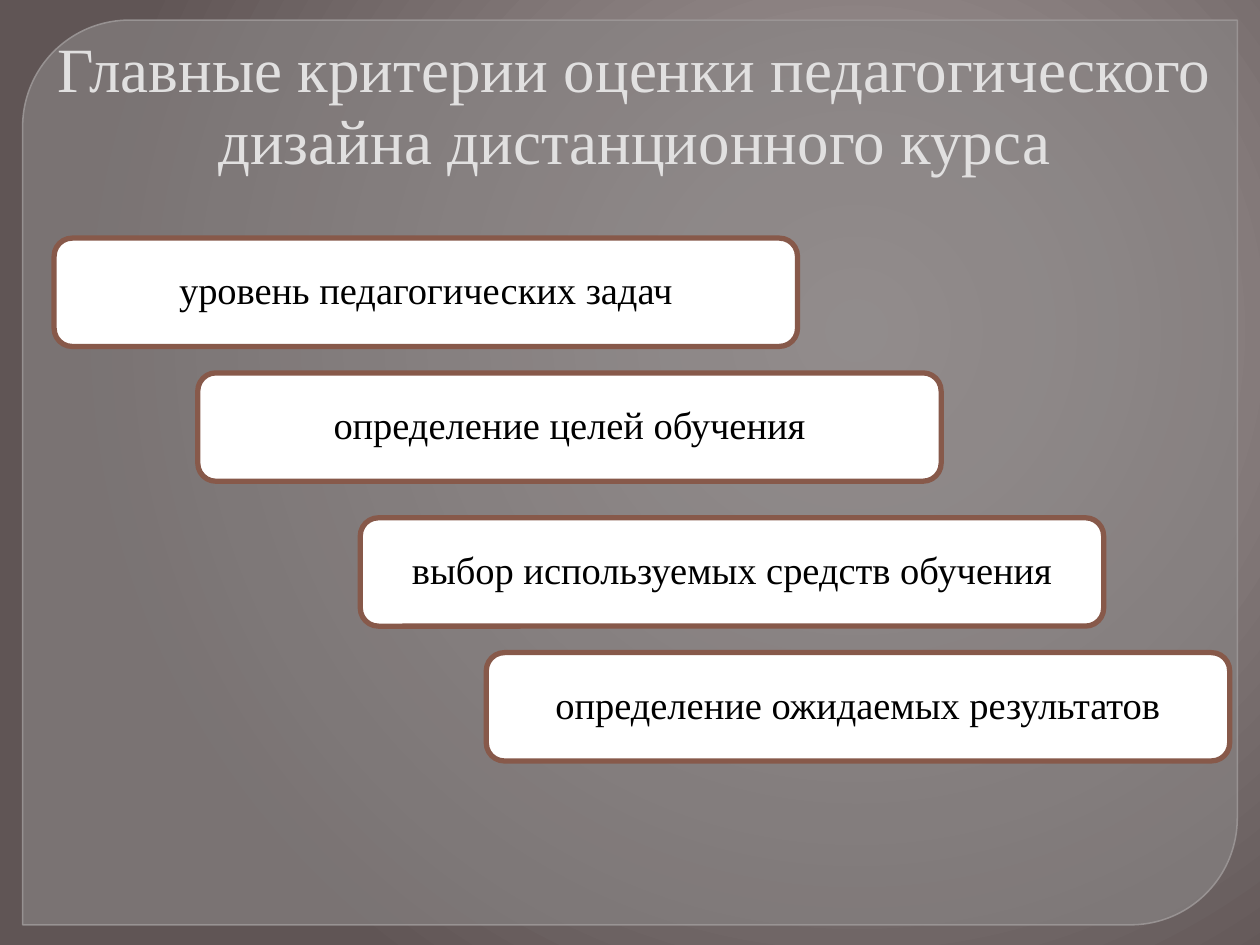
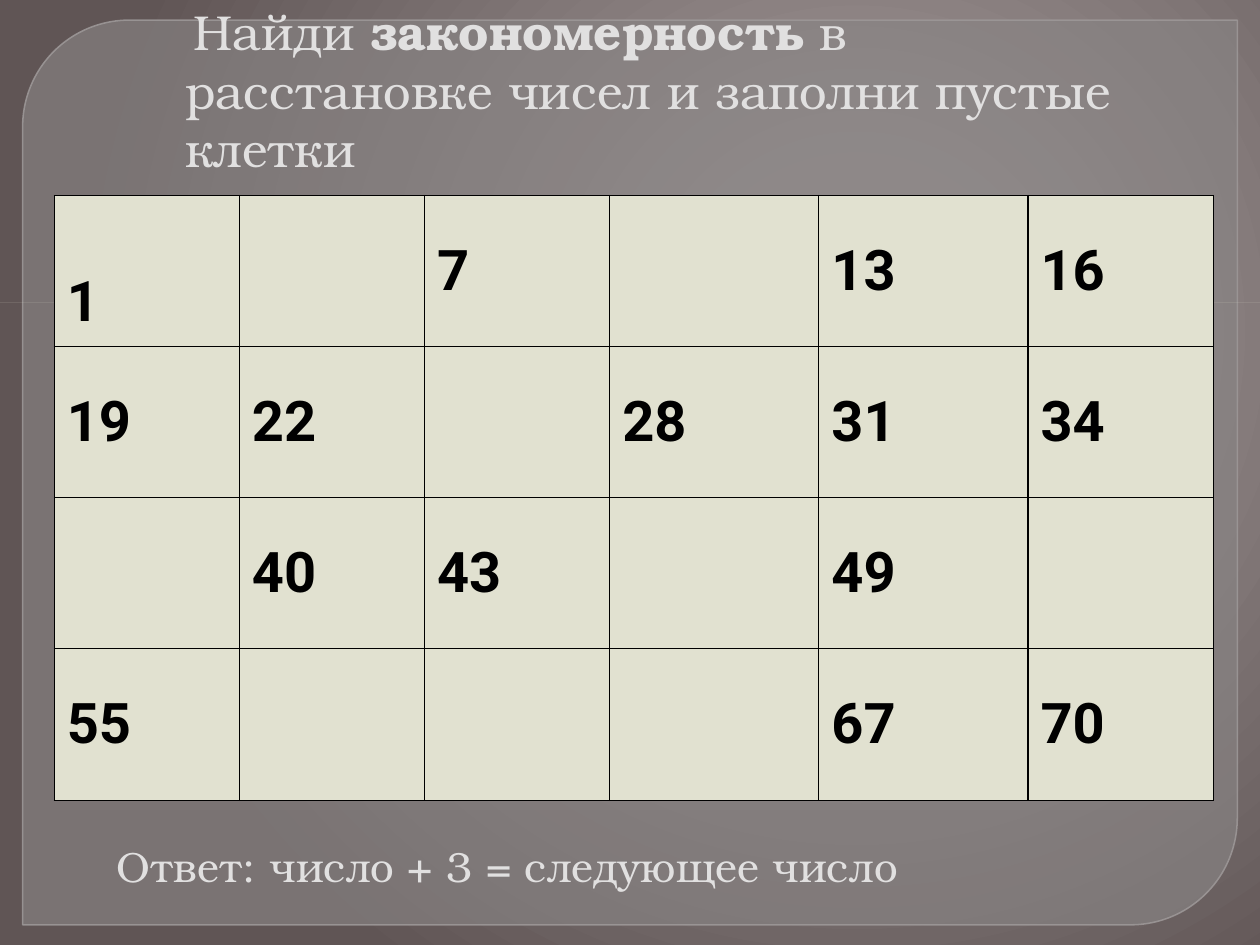
from lxml.etree import SubElement
from pptx import Presentation
from pptx.dml.color import RGBColor
from pptx.enum.shapes import MSO_SHAPE
from pptx.enum.text import MSO_ANCHOR, MSO_AUTO_SIZE, PP_ALIGN
from pptx.oxml import parse_xml
from pptx.oxml.ns import nsdecls, qn
from pptx.util import Inches, Pt

BAND = RGBColor(0x88, 0x84, 0x84)
EDGE = RGBColor(0x9D, 0x98, 0x98)
PALE = RGBColor(0xE1, 0xE0, 0xE0)
BROWN = RGBColor(0x87, 0x59, 0x4A)
CREAM = RGBColor(0xE1, 0xE1, 0xD0)
WHITE = RGBColor(0xFF, 0xFF, 0xFF)
BLACK = RGBColor(0, 0, 0)
TIMES, BONUM, ROBOTO = "Times New Roman", "TeX Gyre Bonum", "Roboto"
STOPS = [(0, "A49C9C"), (20, "9B9292"), (100, "605555")]

GOALS = [
    (0.43, 1.89, "уровень педагогических задач"),
    (1.57, 2.96, "определение целей обучения"),
    (2.86, 4.11, "выбор используемых средств обучения"),
    (3.86, 5.18, "определение ожидаемых результатов"),
]
NUMBERS = [
    ["1", "", "7", "", "13", "16"],
    ["19", "22", "", "28", "31", "34"],
    ["", "40", "43", "", "49", ""],
    ["55", "", "", "", "67", "70"],
]
WIDTHS = [1.47, 1.47, 1.47, 1.66, 1.66, 1.47]
ROW = 1.2


def set_font(font, name, size, color, bold=False):
    """Set the face, size, colour and weight of a font."""
    font.name, font.size, font.bold = name, Pt(size), bold
    font.color.rgb = color


def place(shape, *box):
    """Put a shape at left, top, width, height in inches."""
    shape.left, shape.top, shape.width, shape.height = map(Inches, box)


def add_block(slide, kind, box, fill, line=None, width=0):
    """Add a flat shape, outlined if a line colour is given."""
    block = slide.shapes.add_shape(kind, *map(Inches, box))
    block.shadow.inherit = False
    block.fill.solid()
    block.fill.fore_color.rgb = fill
    if line is None:
        block.line.fill.background()
    else:
        block.line.color.rgb = line
        block.line.width = Pt(width)
    return block


def set_back(layout):
    """Give the layout its round gradient background."""
    layout.background.fill.solid()
    solid = layout.element.find(".//" + qn("p:bgPr")).find(qn("a:solidFill"))
    stops = "".join(
        f'<a:gs pos="{at * 1000}"><a:srgbClr val="{color}"/></a:gs>'
        for at, color in STOPS)
    solid.getparent().replace(solid, parse_xml(
        f'<a:gradFill {nsdecls("a")} rotWithShape="1">'
        f'<a:gsLst>{stops}</a:gsLst><a:path path="circle">'
        '<a:fillToRect l="68000" t="35000" r="32000" b="65000"/>'
        '</a:path></a:gradFill>'))


def add_band(layout, slide):
    """Draw the clear panel and move it to the shared layout."""
    band = add_block(slide, MSO_SHAPE.ROUND_2_DIAG_RECTANGLE,
                     (0.18, 0.16, 9.64, 7.18), BAND, EDGE, 0.87)
    band.adjustments[0], band.adjustments[1] = 0.118, 0
    colors = band.element.spPr.iter(qn("a:srgbClr"))
    for color, alpha in zip(list(colors), (65, 88)):
        SubElement(color, qn("a:alpha"), val=str(alpha * 1000))
    layout.shapes.element.insert(2, band.element)


def set_title(slide, box, anchor, align):
    """Place the title and return its empty paragraph."""
    title = slide.shapes.title
    place(title, *box)
    frame = title.text_frame
    frame.word_wrap = True
    frame.auto_size = MSO_AUTO_SIZE.NONE
    frame.vertical_anchor = anchor
    frame.margin_left = frame.margin_right = Inches(0.09)
    line = frame.paragraphs[0]
    line.alignment = align
    return line


def add_goal(slide, left, top, text):
    """Add a rounded box with one criterion."""
    goal = add_block(slide, MSO_SHAPE.ROUNDED_RECTANGLE,
                     (left, top, 5.9, 0.86), WHITE, BROWN, 3)
    frame = goal.text_frame
    frame.word_wrap = True
    frame.vertical_anchor = MSO_ANCHOR.MIDDLE
    frame.margin_left = frame.margin_right = Inches(0.28)
    frame.margin_top = frame.margin_bottom = 0
    line = frame.paragraphs[0]
    line.text = text
    line.alignment = PP_ALIGN.CENTER
    line.line_spacing = 0.9
    set_font(line.font, TIMES, 22, BLACK)


def set_cell(cell, text):
    """Fill, frame and label one table cell."""
    props = cell._tc.get_or_add_tcPr()
    for side in ("lnL", "lnR", "lnT", "lnB"):
        edge = SubElement(props, qn("a:" + side), w=str(Pt(0.75)))
        paint = SubElement(edge, qn("a:solidFill"))
        SubElement(paint, qn("a:srgbClr"), val=str(BLACK))
    cell.fill.solid()
    cell.fill.fore_color.rgb = CREAM
    cell.vertical_anchor = MSO_ANCHOR.MIDDLE
    line = cell.text_frame.paragraphs[0]
    line.text = text
    set_font(line.font, ROBOTO, 32, BLACK, True)


def add_grid(slide):
    """Add the table of numbers with gaps to fill."""
    count = len(NUMBERS)
    grid = slide.shapes.add_table(
        count, len(WIDTHS), Inches(0.43), Inches(1.55),
        Inches(sum(WIDTHS)), Inches(ROW * count)).table
    grid.first_row = grid.horz_banding = False
    for column, width in zip(grid.columns, WIDTHS):
        column.width = Inches(width)
    for r, values in enumerate(NUMBERS):
        grid.rows[r].height = Inches(ROW)
        for c, text in enumerate(values):
            set_cell(grid.cell(r, c), text)
    grid.cell(0, 0).margin_top = Inches(0.55)


def add_answer(slide):
    """Add the answer below the table."""
    box = slide.shapes.add_textbox(
        Inches(0.83), Inches(6.62), Inches(6.77), Inches(0.5))
    frame = box.text_frame
    frame.word_wrap = True
    frame.vertical_anchor = MSO_ANCHOR.MIDDLE
    line = frame.paragraphs[0]
    line.text = "Ответ: число + 3 = следующее число"
    set_font(line.font, BONUM, 24, PALE)


def build_goals(slide):
    """Build the slide of course criteria."""
    line = set_title(slide, (0.35, 0.21, 9.37, 1.11),
                     MSO_ANCHOR.TOP, PP_ALIGN.CENTER)
    frame = slide.shapes.title.text_frame
    frame.margin_top, frame.margin_bottom = Inches(0.07), Inches(0.04)
    line.text = ("Главные критерии оценки педагогического "
                 "дизайна дистанционного курса")
    line.line_spacing = 0.95
    set_font(line.font, TIMES, 36, PALE)
    for goal in GOALS:
        add_goal(slide, *goal)


def build_puzzle(slide):
    """Build the slide of the number puzzle."""
    line = set_title(slide, (1.38, 0.19, 7.66, 1.04),
                     MSO_ANCHOR.MIDDLE, PP_ALIGN.LEFT)
    for text, name, size, color, bold in (
            (" ", ROBOTO, 20, BLACK, False),
            ("Найди ", BONUM, 28, PALE, False),
            ("закономерность", BONUM, 28, PALE, True),
            (" в расстановке чисел и заполни пустые клетки",
             BONUM, 28, PALE, False)):
        run = line.add_run()
        run.text = text
        set_font(run.font, name, size, color, bold)
    add_block(slide, MSO_SHAPE.RECTANGLE, (0, 2.4, 10, 0), CREAM)
    add_grid(slide)
    add_answer(slide)


def main():
    """Build and save both slides."""
    deck = Presentation()
    deck.slide_width, deck.slide_height = Inches(10), Inches(7.5)
    layout = deck.slide_layouts[5]
    first, second = [deck.slides.add_slide(layout) for _ in range(2)]
    set_back(layout)
    add_band(layout, first)
    build_goals(first)
    build_puzzle(second)
    deck.save("out.pptx")


if __name__ == "__main__":
    main()
